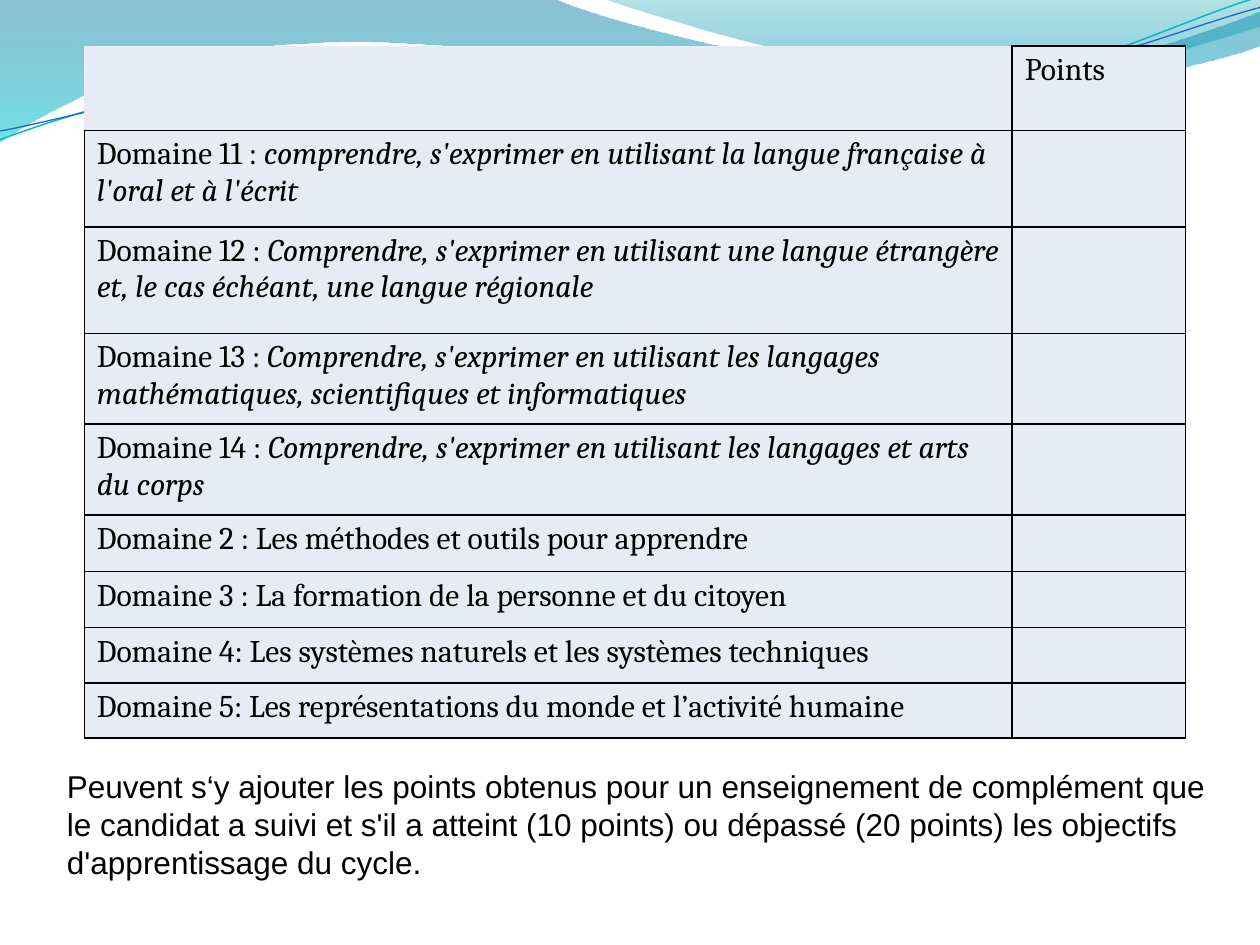
import dataclasses

import lxml.etree
import pptx
import pptx.dml.color
import pptx.enum.text
import pptx.oxml
import pptx.oxml.ns
import pptx.util

Pt = pptx.util.Pt
qn = pptx.oxml.ns.qn


@dataclasses.dataclass(frozen=True)
class Theme:
    ink: str = "000000"
    cell: str = "E7EBF5"
    teal_line: str = "0AB8BF"
    blue_line: str = "0F6FC6"
    wide_stops: tuple = ((0, "0074A1", 45), (100, "00C6CF", 55))
    right_stops: tuple = ((0, "00A1A9", 30), (80, "008BBF", 45))
    table_font: str = "Cambria"
    note_font: str = "Arial"
    size: int = 18
    border: int = 1


THEME = Theme()

WIDE_WAVE = [
    [(0, 0)],
    [(316.8, -0.7)],
    [(342.7, 12.2), (478.1, 45.4), (545.8, 45.4)],
    [(614.2, 45.4), (689.8, 18.7), (720, 6.5)],
    [(720.7, 25.9)],
    [(707.8, 31.7), (626.4, 54.7), (537.1, 54)],
    [(447.8, 54), (275, 20.2), (185, 24.5)],
    [(92.9, 25.9), (33.1, 59.8), (-0.7, 81.4)],
]
RIGHT_WAVE = [
    [(344.9, -0.7)],
    [(366.5, 7.9), (491, 44.6), (553.7, 46.8)],
    [(616.3, 49.7), (691.9, 23), (720, 15.1)],
    [(720, 0)],
]
TEAL_CURVE = [
    [(-1.4, 62.9)],
    [(33.7, 51.6), (114, 29.4), (199.8, 29.9)],
    [(284.8, 30.3), (425.8, 67.2), (512.4, 64.9)],
    [(599, 62.4), (676.4, 25.7), (720.1, 15.6)],
]
BLUE_CURVE = [
    [(-1.2, 57.9)],
    [(33, 53.7), (118.3, 32.5), (204, 33)],
    [(290.5, 33.5), (428.9, 63.8), (515.5, 61.3)],
    [(601.3, 59.6), (678.5, 30.1), (721.4, 21.3)],
]
CURVE_TILT = 357.3

COLUMNS = (530.2, 99.1)
ROWS = [
    (48.3, "", ""),
    (55.2, "Domaine 11 : ", "comprendre, s'exprimer en utilisant la langue française à l'oral et à l'écrit"),
    (60.8, "Domaine 12 :", " Comprendre, s'exprimer en utilisant une langue étrangère et, le cas échéant, une langue régionale"),
    (52, "Domaine 13 : ", "Comprendre, s'exprimer en utilisant les langages mathématiques, scientifiques et informatiques"),
    (52, "Domaine 14 : ", "Comprendre, s'exprimer en utilisant les langages et arts du corps"),
    (32.1, "Domaine 2 : Les méthodes et outils pour apprendre", ""),
    (32.1, "Domaine 3 : La formation de la personne et du citoyen", ""),
    (31.6, "Domaine 4: Les systèmes naturels et les systèmes techniques", ""),
    (31.6, "Domaine 5: Les représentations du monde et l’activité humaine", ""),
]
NOTE = (
    "Peuvent s‘y ajouter les points obtenus pour un enseignement de complément que "
    "le candidat a suivi et s'il a atteint (10 points) ou dépassé (20 points) les objectifs "
    "d'apprentissage du cycle."
)


def apply(target, values):
    for name, value in values.items():
        setattr(target, name, value)


def rgb(code):
    return pptx.dml.color.RGBColor.from_string(code)


def add_span(para, text, font, italic=False):
    span = para.add_run()
    span.text = text
    apply(span.font, {"name": font, "size": Pt(THEME.size), "italic": italic})
    span.font.color.rgb = rgb(THEME.ink)


def add_outline(page, box, segments, close):
    left, top = box[:2]
    points = [(Pt(left + x), Pt(top + y)) for segment in segments for x, y in segment]
    builder = page.shapes.build_freeform(*points[0], scale=1.0)
    builder.add_line_segments(points[1:], close=close)
    shape = builder.convert_to_shape()
    shape.shadow.inherit = False
    steps = iter(list(shape._element.iter(qn("a:lnTo"))))
    for segment in segments[1:]:
        group = [next(steps) for _ in segment]
        if len(group) == 3:
            bend = lxml.etree.Element(qn("a:cubicBezTo"))
            group[0].addprevious(bend)
            for step in group:
                bend.append(step[0])
                step.getparent().remove(step)
    return shape


def fade(shape, stops):
    shape.line.fill.background()
    shape.fill.gradient()
    shape.fill.gradient_angle = 270
    listing = shape._element.spPr.find(qn("a:gradFill")).find(qn("a:gsLst"))
    for stop in list(listing):
        listing.remove(stop)
    for place, color, opacity in stops:
        stop = lxml.etree.SubElement(listing, qn("a:gs"), pos=str(place * 1000))
        tint = lxml.etree.SubElement(stop, qn("a:srgbClr"), val=color)
        lxml.etree.SubElement(tint, qn("a:alpha"), val=str(opacity * 1000))


def move_to_master(shape, master):
    shape._element.nvSpPr.cNvPr.id = max(item.shape_id for item in master.shapes) + 1
    master.shapes._spTree.append(shape._element)


def draw_waves(page, box):
    master = page.slide_layout.slide_master
    for segments, stops in ((WIDE_WAVE, THEME.wide_stops), (RIGHT_WAVE, THEME.right_stops)):
        wave = add_outline(page, box, segments, True)
        fade(wave, stops)
        move_to_master(wave, master)
    for segments, color, width in ((TEAL_CURVE, THEME.teal_line, 0.85), (BLUE_CURVE, THEME.blue_line, 0.75)):
        curve = add_outline(page, box, segments, False)
        curve.rotation = CURVE_TILT
        curve.fill.background()
        curve.line.color.rgb = rgb(color)
        curve.line.width = Pt(width)
        move_to_master(curve, master)


def set_borders(cell, sides):
    props = cell._tc.get_or_add_tcPr()
    for index, side in enumerate("LRTB"):
        line = pptx.oxml.parse_xml(
            f'<a:ln{side} xmlns:a="http://schemas.openxmlformats.org/drawingml/2006/main" '
            f'w="{Pt(THEME.border)}"/>'
        )
        if side in sides:
            fill = lxml.etree.SubElement(line, qn("a:solidFill"))
            lxml.etree.SubElement(fill, qn("a:srgbClr"), val=THEME.ink)
        else:
            lxml.etree.SubElement(line, qn("a:noFill"))
        props.insert(index, line)


def draw_score_table(page, box):
    table = page.shapes.add_table(len(ROWS), len(COLUMNS), *map(Pt, box)).table
    apply(table, {"first_row": False, "horz_banding": False})
    for column, width in zip(table.columns, COLUMNS):
        column.width = Pt(width)
    for index, (height, label, detail) in enumerate(ROWS):
        table.rows[index].height = Pt(height)
        domain, points = table.rows[index].cells
        for cell in (domain, points):
            cell.fill.solid()
            cell.fill.fore_color.rgb = rgb(THEME.cell)
            set_borders(cell, "RB" if index == 0 and cell is domain else "LRTB")
        para = domain.text_frame.paragraphs[0]
        for text, italic in ((label, False), (detail, True)):
            if text:
                add_span(para, text, THEME.table_font, italic)
    add_span(table.cell(0, 1).text_frame.paragraphs[0], "Points", THEME.table_font)


def draw_note(page, box):
    frame = page.shapes.add_textbox(*map(Pt, box)).text_frame
    apply(frame, {
        "word_wrap": True,
        "auto_size": pptx.enum.text.MSO_AUTO_SIZE.SHAPE_TO_FIT_TEXT,
        "vertical_anchor": pptx.enum.text.MSO_ANCHOR.MIDDLE,
    })
    add_span(frame.paragraphs[0], NOTE, THEME.note_font)


def main():
    deck = pptx.Presentation()
    apply(deck, {"slide_width": Pt(720), "slide_height": Pt(540)})
    page = deck.slides.add_slide(deck.slide_layouts[6])
    draw_waves(page, (0, 0, 720, 82))
    draw_score_table(page, (48.2, 26.2, sum(COLUMNS), sum(row[0] for row in ROWS)))
    draw_note(page, (31.2, 434.4, 671.8, 72.7))
    deck.save("out.pptx")


if __name__ == "__main__":
    main()
